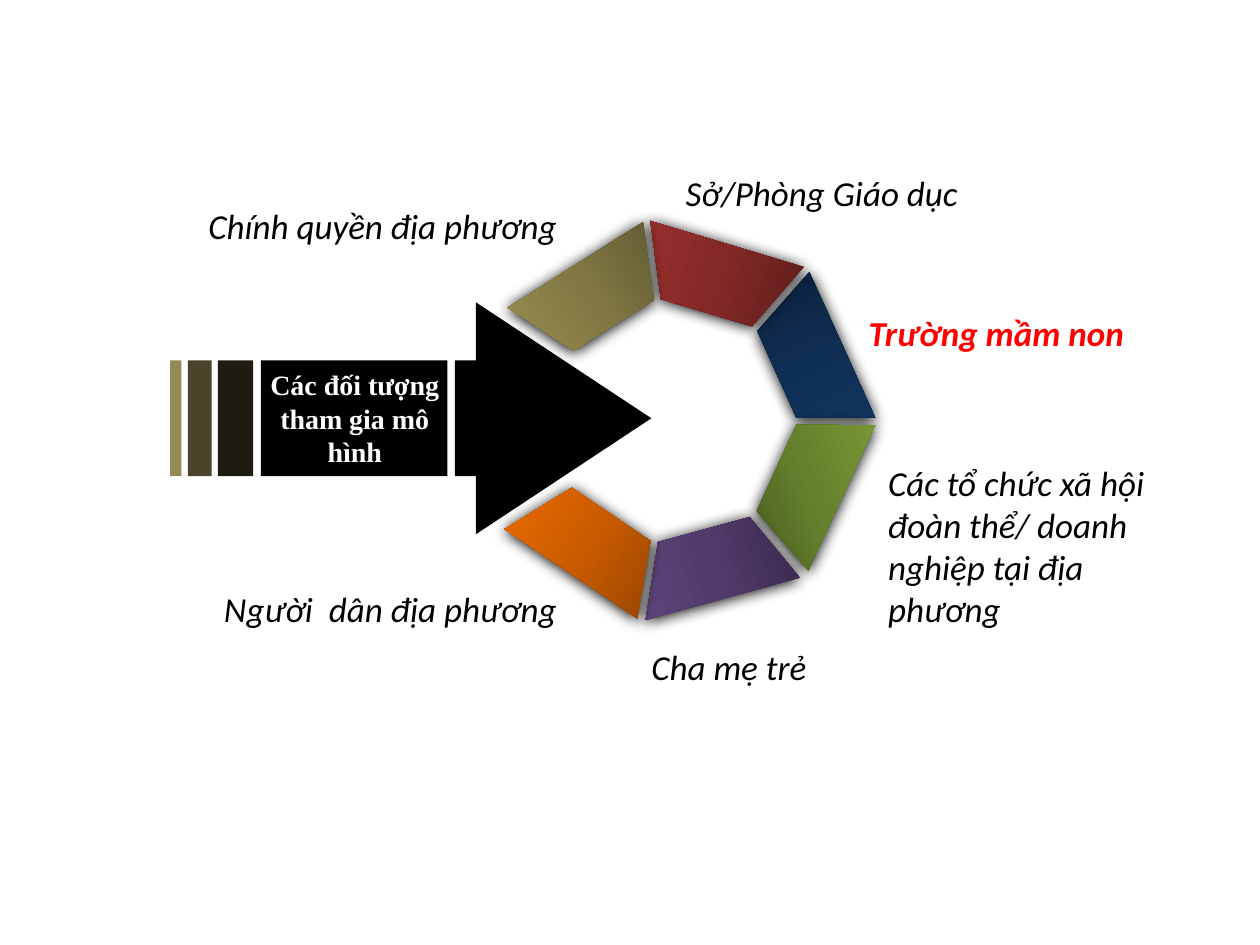
from copy import deepcopy
from math import cos, radians, sin

from lxml import etree
from pptx import Presentation
from pptx.dml.color import RGBColor
from pptx.enum.shapes import MSO_SHAPE
from pptx.enum.text import MSO_AUTO_SIZE, PP_ALIGN
from pptx.oxml.ns import qn
from pptx.util import Inches, Pt

TRAPEZOID = MSO_SHAPE.TRAPEZOID
RECTANGLE = MSO_SHAPE.RECTANGLE
RIGHT_ARROW = MSO_SHAPE.RIGHT_ARROW
LEFT, CENTER, RIGHT = PP_ALIGN.LEFT, PP_ALIGN.CENTER, PP_ALIGN.RIGHT
SHAPE_TO_FIT = MSO_AUTO_SIZE.SHAPE_TO_FIT_TEXT

COLORS = {
    "black": "000000",
    "white": "FFFFFF",
    "highlight": "FF0000",
    "tan": "948A54",
    "olive": "4A452A",
    "dark_olive": "1E1C11",
}

SEGMENTS = [
    (65.7, False, 0, ("0B203B", "0F2E53", "123663")),
    (114.7, False, 135, ("485B20", "66812D", "799936")),
    (164.7, False, 0, ("39294B", "513B6B", "60467E")),
    (214, False, 0, ("8D4000", "C85B00", "EE6B00")),
    (16.7, True, 0, ("5D1D1B", "842926", "9C302E")),
    (327.7, True, 0, ("5A542F", "817743", "998D4F")),
]

LABELS = [
    ("Chính quyền địa phương", (1.53, 1.57, 2.99, 0.44), {}),
    ("Người  dân địa phương", (1.66, 4.61, 2.86, 0.44), {}),
    ("Trường mầm non", (6.78, 2.42, 2.24, 0.44), {"color": "highlight", "bold": True}),
    ("Cha mẹ trẻ", (5.06, 5.07, 1.44, 0.44), {}),
    ("Các tổ chức xã hội đoàn thể/ doanh nghiệp tại địa phương",
     (6.95, 3.61, 2.54, 1.45), {"align": LEFT, "wrap": True}),
    ("Sở/Phòng Giáo dục", (5.32, 1.31, 2.38, 0.44), {}),
]


def add_plain_shape(slide, kind, box):
    shape = slide.shapes.add_shape(kind, *[Inches(length) for length in box])
    shape.shadow.inherit = False
    shape.line.fill.background()
    return shape


def add_solid_shape(slide, kind, box, color):
    shape = add_plain_shape(slide, kind, box)
    shape.fill.solid()
    shape.fill.fore_color.rgb = RGBColor.from_string(COLORS[color])
    return shape


def set_gradient(shape, colors, angle):
    shape.fill.gradient()
    shape.fill.gradient_angle = (360 - angle) % 360
    stop_list = shape._element.spPr.find(".//" + qn("a:gsLst"))
    stop_list.append(deepcopy(stop_list[0]))
    for stop, position, color in zip(shape.fill.gradient_stops, (0, 0.5, 1), colors):
        stop.position = position
        stop.color.rgb = RGBColor.from_string(color)


def add_soft_shadow(shape):
    effects = shape._element.spPr.find(qn("a:effectLst"))
    shadow = etree.SubElement(
        effects, qn("a:outerShdw"), blurRad=str(Pt(8.5)), dist=str(Pt(1)),
        dir="5400000", algn="ctr", rotWithShape="0")
    etree.SubElement(shadow, qn("a:srgbClr"), val=COLORS["black"])


def add_ring(slide, center_x, center_y, radius, width, height):
    for rotation, mirrored, angle, colors in SEGMENTS:
        direction = radians(rotation - 90)
        left = center_x + radius * cos(direction) - width / 2
        top = center_y + radius * sin(direction) - height / 2
        segment = add_plain_shape(slide, TRAPEZOID, (left, top, width, height))
        segment.adjustments[0] = 0.453
        segment.rotation = rotation
        transform = segment._element.spPr.find(qn("a:xfrm"))
        transform.set("flipV", "1")
        if mirrored:
            transform.set("flipH", "1")
        set_gradient(segment, colors, angle)
        add_soft_shadow(segment)


def add_text(slide, text, box, color="black", font="Calibri", size=20,
             bold=False, italic=True, align=RIGHT, wrap=False):
    text_box = slide.shapes.add_textbox(*[Inches(length) for length in box])
    text_frame = text_box.text_frame
    text_frame.text = text
    text_frame.word_wrap = wrap
    text_frame.auto_size = SHAPE_TO_FIT
    paragraph = text_frame.paragraphs[0]
    paragraph.alignment = align
    run_font = paragraph.runs[0].font
    run_font.name = font
    run_font.size = Pt(size)
    run_font.bold = bold
    run_font.italic = italic
    run_font.color.rgb = RGBColor.from_string(COLORS[color])


def add_striped_arrow(slide, left, top, width, height):
    head_width = 1.56
    arrow = add_solid_shape(
        slide, RIGHT_ARROW, (left + width - head_width, top, head_width, height), "black")
    arrow.adjustments[0] = 0.5
    arrow.adjustments[1] = 0.892
    bar_top, bar_height = top + height / 4, height / 2
    bars = [(0, 0.09, "tan"), (0.14, 0.19, "olive"),
            (0.38, 0.28, "dark_olive"), (0.72, 1.48, "black")]
    for offset, bar_width, color in bars:
        add_solid_shape(
            slide, RECTANGLE, (left + offset, bar_top, bar_width, bar_height), color)
    add_text(slide, "Các đối tượng tham gia mô hình",
             (left + 0.54, bar_top + 0.01, 1.85, 0.91), color="white",
             font="Times New Roman", size=16, bold=True, italic=False,
             align=CENTER, wrap=True)


def add_labels(slide):
    for text, box, style in LABELS:
        add_text(slide, text, box, **style)


def main():
    presentation = Presentation()
    presentation.slide_width = Inches(10)
    presentation.slide_height = Inches(7.5)
    slide = presentation.slides.add_slide(presentation.slide_layouts[6])
    add_ring(slide, 5.35, 3.34, 1.18, 1.27, 0.57)
    add_striped_arrow(slide, 1.35, 2.4, 3.82, 1.84)
    add_labels(slide)
    presentation.save("out.pptx")


if __name__ == "__main__":
    main()
